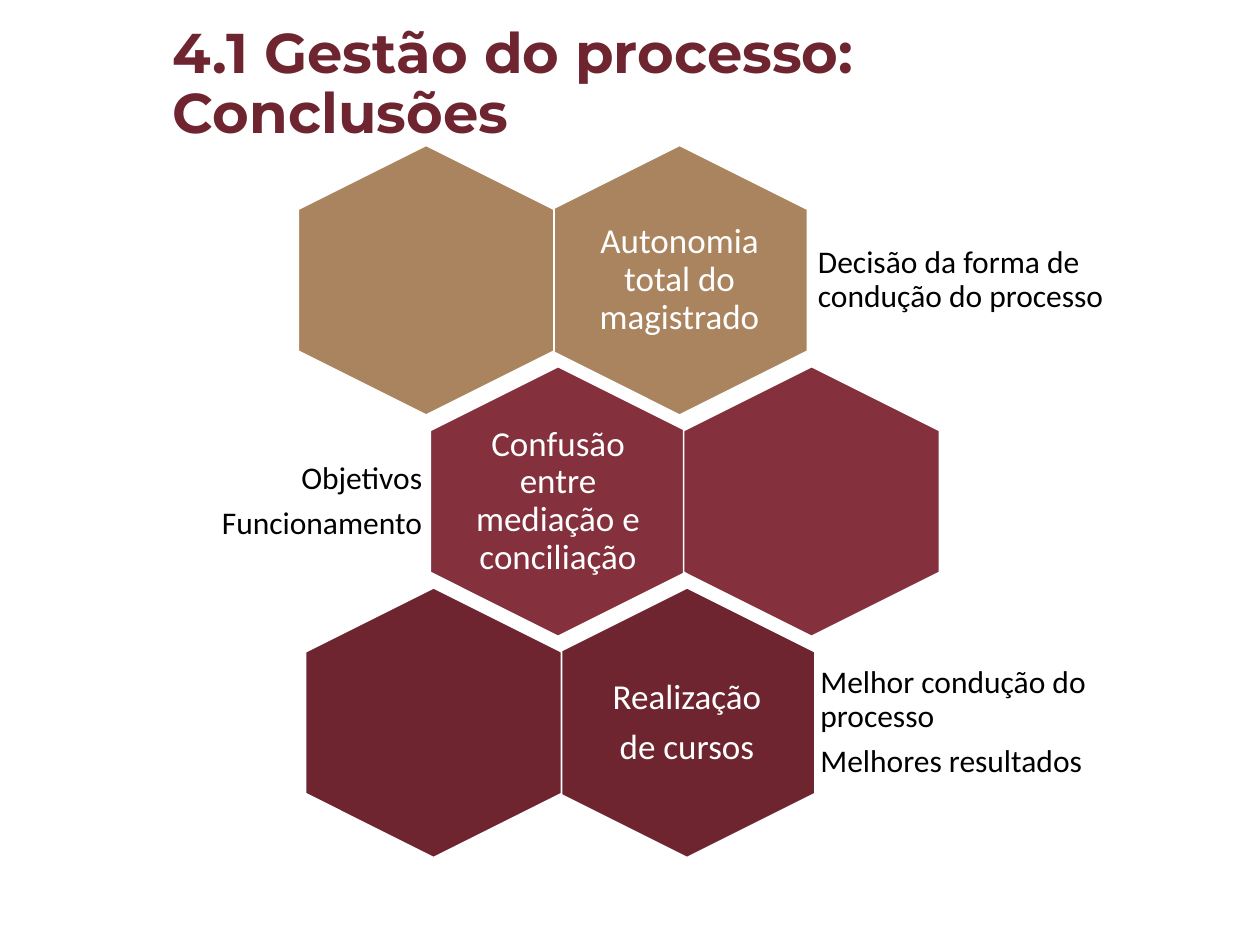
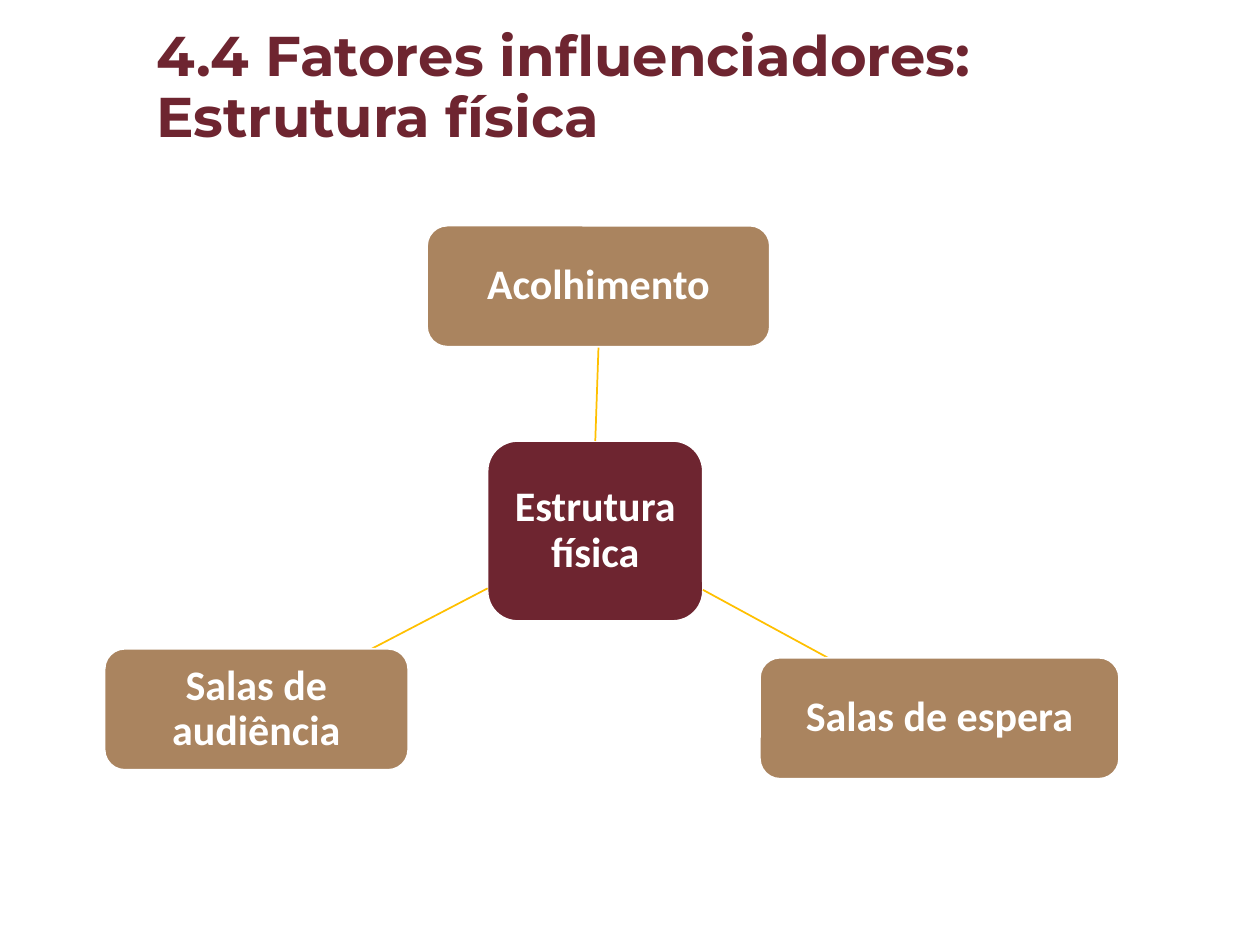
from dataclasses import dataclass

from lxml.etree import SubElement
from pptx import Presentation
from pptx.dml.color import RGBColor
from pptx.enum.shapes import MSO_CONNECTOR, MSO_SHAPE as Shape
from pptx.enum.text import MSO_ANCHOR as Anchor, MSO_AUTO_SIZE, PP_ALIGN as Align
from pptx.oxml.ns import qn
from pptx.util import Cm, Pt


@dataclass(frozen=True)
class Theme:
    wine: RGBColor = RGBColor.from_string("6E2530")
    crimson: RGBColor = RGBColor.from_string("84303D")
    tan: RGBColor = RGBColor.from_string("AA845F")
    gold: RGBColor = RGBColor.from_string("FFC000")
    white: RGBColor = RGBColor.from_string("FFFFFF")
    black: RGBColor = RGBColor.from_string("000000")
    title_font: str = "Montserrat"
    body_font: str = "Calibri"
    title_size: int = 32
    node_size: int = 24
    hexagon_size: int = 20
    note_size: int = 18
    line_width: int = 1
    line_spacing: float = 0.9
    space_after: float = 0.35  # share of the type size


THEME = Theme()
TITLE_ONLY_LAYOUT = 5

HEXAGON_LENGTH, HEXAGON_BREADTH = 5.44, 5.16
HEXAGON_STEP = 5.11
FIRST_ROW_Y, ROW_STEP = 5.65, 4.46
LABEL_WIDTH, LABEL_HEIGHT = 3.48, 3.68
NOTE_HEIGHT = 3.25
NOTE_INSET = 0.18
NODE_INSET = 0.3
BRANCH_HEIGHT = 2.44


def style_paragraph(paragraph, size, color, align, bold=False, font_name=THEME.body_font):
    paragraph.alignment = align
    paragraph.line_spacing = THEME.line_spacing
    paragraph.font.name = font_name
    paragraph.font.size = Pt(size)
    paragraph.font.bold = bold
    paragraph.font.color.rgb = color


def fill_text(shape, text, size, color, align, inset=0, bold=False):
    """Put one paragraph per line of text into a shape, centred vertically."""
    frame = shape.text_frame
    frame.word_wrap = True
    frame.vertical_anchor = Anchor.MIDDLE
    frame.margin_left = frame.margin_right = Cm(inset)
    frame.margin_top = frame.margin_bottom = Cm(NOTE_INSET)
    frame.text = text
    for paragraph in frame.paragraphs:
        style_paragraph(paragraph, size, color, align, bold)
        paragraph.space_after = Pt(size * THEME.space_after)


def add_titled_slide(presentation, title, left, top, width, height, anchor):
    slide = presentation.slides.add_slide(presentation.slide_layouts[TITLE_ONLY_LAYOUT])
    shape = slide.shapes.title
    shape.left, shape.top = Cm(left), Cm(top)
    shape.width, shape.height = Cm(width), Cm(height)
    frame = shape.text_frame
    frame.auto_size = MSO_AUTO_SIZE.NONE
    frame.word_wrap = True
    frame.vertical_anchor = anchor
    frame.text = title
    for paragraph in frame.paragraphs:
        style_paragraph(paragraph, THEME.title_size, THEME.wine, Align.LEFT,
                        True, THEME.title_font)
    return slide


def add_filled_shape(slide, kind, left, top, width, height, color):
    shape = slide.shapes.add_shape(kind, Cm(left), Cm(top), Cm(width), Cm(height))
    shape.shadow.inherit = False
    shape.fill.solid()
    shape.fill.fore_color.rgb = color
    shape.line.color.rgb = THEME.white
    shape.line.width = Pt(THEME.line_width)
    return shape


def add_hexagon(slide, center_x, center_y, color):
    """Add a hexagon that stands on one of its corners."""
    hexagon = add_filled_shape(
        slide, Shape.HEXAGON, center_x - HEXAGON_LENGTH / 2,
        center_y - HEXAGON_BREADTH / 2, HEXAGON_LENGTH, HEXAGON_BREADTH, color)
    hexagon.adjustments[0] = 0.25
    hexagon.rotation = 90


def add_text(slide, text, left, center_y, width, height, *style):
    box = slide.shapes.add_textbox(
        Cm(left), Cm(center_y - height / 2), Cm(width), Cm(height))
    fill_text(box, text, *style)


def add_node(slide, text, left, top, width, height, color):
    node = add_filled_shape(slide, Shape.ROUNDED_RECTANGLE, left, top, width, height, color)
    fill_text(node, text, THEME.node_size, THEME.white, Align.CENTER, NODE_INSET, True)
    return node


def add_spoke(slide, start_x, start_y, end_x, end_y):
    spoke = slide.shapes.add_connector(
        MSO_CONNECTOR.STRAIGHT, Cm(start_x), Cm(start_y), Cm(end_x), Cm(end_y))
    spoke.line.color.rgb = THEME.gold
    spoke.line.width = Pt(THEME.line_width)
    SubElement(spoke._element.spPr, qn("a:effectLst"))
    return spoke


def add_conclusions_slide(presentation):
    slide = add_titled_slide(
        presentation, "4.1 Gestão do processo:\nConclusões",
        3.23, -0.18, 18.01, 3.25, Anchor.BOTTOM)
    # first centre, labelled column, colour, label, note, note left, note width, note side
    rows = [
        (8.59, 1, THEME.tan, "Autonomia total do magistrado",
         "Decisão da forma de condução do processo", 16.31, 7.72, Align.LEFT),
        (11.25, 0, THEME.crimson, "Confusão entre mediação e conciliação",
         "Objetivos\nFuncionamento", 2.82, 5.87, Align.RIGHT),
        (8.74, 1, THEME.wine, "Realização\nde cursos",
         "Melhor condução do processo\nMelhores resultados", 16.36, 6.07, Align.LEFT),
    ]
    for index, row in enumerate(rows):
        first_x, label_column, color, label, note, note_left, note_width, side = row
        center_y = FIRST_ROW_Y + index * ROW_STEP
        for column in (label_column, 1 - label_column):
            add_hexagon(slide, first_x + column * HEXAGON_STEP, center_y, color)
        label_left = first_x + label_column * HEXAGON_STEP - LABEL_WIDTH / 2
        add_text(slide, label, label_left, center_y, LABEL_WIDTH, LABEL_HEIGHT,
                 THEME.hexagon_size, THEME.white, Align.CENTER)
        add_text(slide, note, note_left, center_y, note_width, NOTE_HEIGHT,
                 THEME.note_size, THEME.black, side, NOTE_INSET)


def add_structure_slide(presentation):
    slide = add_titled_slide(
        presentation, "4.4 Fatores influenciadores:\vEstrutura física",
        2.9, -0.05, 21.89, 3.68, Anchor.MIDDLE)
    hub = add_node(slide, "Estrutura física", 9.83, 8.89, 4.34, 3.63, THEME.wine)
    branches = [
        ("Acolhimento", 8.61, 4.55, 6.91, (12, 8.89, 12.06, 6.99)),
        ("Salas de espera", 15.32, 13.26, 7.24, (14.17, 11.89, 16.69, 13.26)),
        ("Salas de audiência", 2.11, 13.08, 6.12, (9.83, 11.86, 7.49, 13.08)),
    ]
    nodes, spokes = [], []
    for text, left, top, width, ends in branches:
        spokes.append(add_spoke(slide, *ends))
        nodes.append(add_node(slide, text, left, top, width, BRANCH_HEIGHT, THEME.tan))
    spokes[0].begin_connect(hub, 0)
    spokes[0].end_connect(nodes[0], 2)


def main():
    presentation = Presentation()
    presentation.slide_width, presentation.slide_height = Cm(25.4), Cm(19.05)
    add_conclusions_slide(presentation)
    add_structure_slide(presentation)
    presentation.save("out.pptx")


if __name__ == "__main__":
    main()
